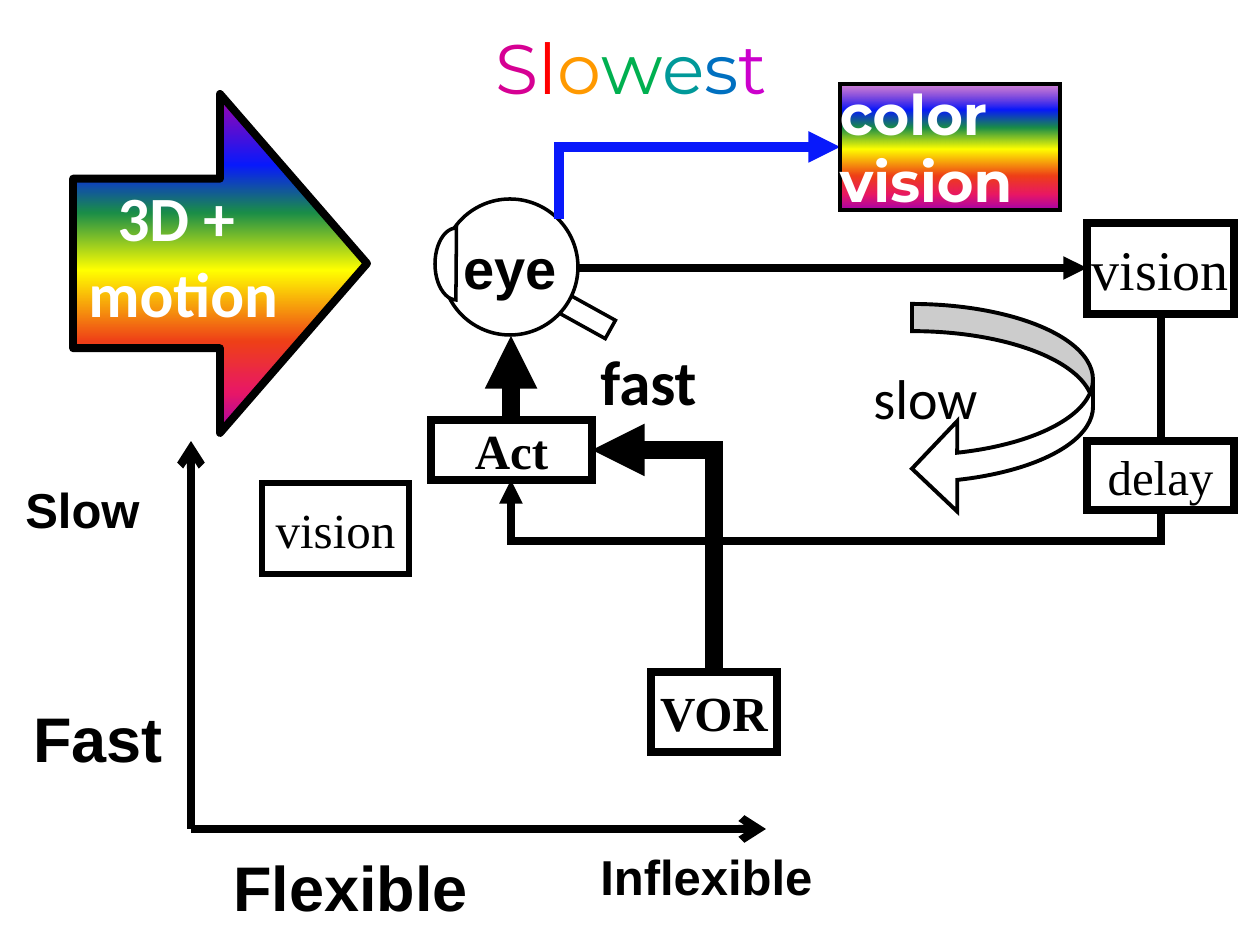
from dataclasses import dataclass
from typing import Optional

from lxml.etree import SubElement
from pptx import Presentation
from pptx.dml.color import RGBColor
from pptx.enum.shapes import MSO_CONNECTOR as Connector, MSO_SHAPE as Preset
from pptx.enum.text import MSO_ANCHOR as Anchor, MSO_AUTO_SIZE as AutoSize, PP_ALIGN as Align
from pptx.oxml.ns import qn
from pptx.util import Pt

EMU_PER_PX = 914400 / 126
BLACK, WHITE, BLUE = "000000", "FFFFFF", "0819FB"
SERIF, SANS, HUMANIST, GEOMETRIC = "Times New Roman", "Arial", "Calibri", "Montserrat"
RAINBOW = [(0, "A603AB"), (21, BLUE), (35, "1A8D48"), (52, "FFFF00"),
           (73, "EE3F17"), (88, "E81766"), (100, "A603AB")]


@dataclass
class Font:
    name: str
    size: int
    bold: bool = False
    color: str = BLACK


@dataclass
class Label:
    text: str
    left: int
    top: int
    width: int
    height: int
    font: Font


@dataclass
class Figure:
    preset: Preset
    left: int
    top: int
    width: int
    height: int
    line_width: float
    text: str = ""
    font: Optional[Font] = None
    rotation: int = 0
    adjustments: tuple = ()


@dataclass
class Arrow:
    start: tuple
    end: tuple
    width: float
    color: str = BLACK
    head: str = "triangle"


@dataclass
class Elbow(Arrow):
    """An arrow with right-angled bends, held in a frame turned by rotation."""
    preset: str = "bentConnector2"
    rotation: int = 90
    flip: str = ""
    bend: Optional[int] = None


def px(value: float) -> int:
    return round(value * EMU_PER_PX)


def rgb(color: str) -> RGBColor:
    return RGBColor.from_string(color)


def set_font(target, font: Font) -> None:
    target.name, target.size, target.bold = font.name, Pt(font.size), font.bold
    target.color.rgb = rgb(font.color)


def set_line(item, width: float, color: str = BLACK, mitered: bool = True):
    item.line.color.rgb = rgb(color)
    item.line.width = Pt(width)
    outline = item.line._get_or_add_ln()
    if mitered:
        SubElement(outline, qn("a:miter"), lim="800000")
    return outline


def write(frame, text: str, font: Font, align: Align) -> None:
    frame.word_wrap = False
    frame.text = text
    for paragraph in frame.paragraphs:
        paragraph.alignment = align
        set_font(paragraph.font, font)


def add_label(slide, label: Label):
    box = slide.shapes.add_textbox(*map(px, (label.left, label.top, label.width, label.height)))
    write(box.text_frame, label.text, label.font, Align.LEFT)
    box.text_frame.auto_size = AutoSize.SHAPE_TO_FIT_TEXT
    return box


def add_figure(slide, figure: Figure, mitered: bool = True):
    shape = slide.shapes.add_shape(
        figure.preset, *map(px, (figure.left, figure.top, figure.width, figure.height)))
    shape.shadow.inherit = False
    shape.rotation = figure.rotation
    for index, value in enumerate(figure.adjustments):
        shape.adjustments[index] = value
    shape.fill.solid()
    shape.fill.fore_color.rgb = rgb(WHITE)
    set_line(shape, figure.line_width, mitered=mitered)
    if figure.font:
        write(shape.text_frame, figure.text, figure.font, Align.CENTER)
        shape.text_frame.vertical_anchor = Anchor.MIDDLE
    return shape


def fill_rainbow(shape, first_alpha: int = 100) -> None:
    """Fill from top to bottom and let the text reach the edges."""
    shape.fill.gradient()
    shape.fill.gradient_angle = 270
    stops = shape._element.spPr.find(".//" + qn("a:gsLst"))
    stops.clear()
    for position, color in RAINBOW:
        stop = SubElement(stops, qn("a:gs"), pos=str(position * 1000))
        value = SubElement(stop, qn("a:srgbClr"), val=color)
        if position == 0 and first_alpha < 100:
            SubElement(value, qn("a:alpha"), val=str(first_alpha * 1000))
    frame = shape.text_frame
    frame.margin_left = frame.margin_right = frame.margin_top = frame.margin_bottom = 0


def finish_arrow(connector, arrow: Arrow) -> None:
    outline = set_line(connector, arrow.width, arrow.color)
    SubElement(outline, qn("a:tailEnd"), type=arrow.head)
    SubElement(connector._element.spPr, qn("a:effectLst"))


def add_arrow(slide, arrow: Arrow) -> None:
    connector = slide.shapes.add_connector(
        Connector.STRAIGHT, *map(px, arrow.start + arrow.end))
    finish_arrow(connector, arrow)


def add_elbow(slide, elbow: Elbow) -> None:
    (x1, y1), (x2, y2) = elbow.start, elbow.end
    center_x, center_y = (x1 + x2) / 2, (y1 + y2) / 2
    half_width, half_height = abs(y2 - y1) / 2, abs(x2 - x1) / 2
    if "h" in elbow.flip:
        half_width = -half_width
    if "v" in elbow.flip:
        half_height = -half_height
    connector = slide.shapes.add_connector(
        Connector.ELBOW, px(center_x - half_width), px(center_y - half_height),
        px(center_x + half_width), px(center_y + half_height))
    properties = connector._element.spPr
    properties.find(qn("a:xfrm")).set("rot", str(elbow.rotation * 60000))
    geometry = properties.find(qn("a:prstGeom"))
    geometry.set("prst", elbow.preset)
    if elbow.bend is not None:
        SubElement(geometry.find(qn("a:avLst")), qn("a:gd"),
                   name="adj1", fmla=f"val {elbow.bend}")
    finish_arrow(connector, elbow)


EYE = [
    Figure(Preset.RECTANGLE, 556, 305, 58, 21, 2, rotation=29),
    Figure(Preset.OVAL, 442, 199, 136, 136, 2, "eye", Font(SANS, 32, True)),
    Figure(Preset.CHORD, 435, 228, 43, 72, 2, adjustments=(54.59, 162)),
]
ARROWS = [
    Arrow((191, 829), (191, 441), 4.5, head="arrow"),
    Arrow((191, 829), (766, 829), 4.5, head="arrow"),
    Arrow((578, 268), (1087, 268), 4.5),
    Arrow((511, 420), (511, 336), 10),
    Arrow((1161, 314), (1161, 494), 4.5),
]
ELBOWS = [
    Elbow((1161, 510), (511, 480), 4.5, preset="bentConnector3", flip="h", bend=-102900),
    Elbow((714, 672), (592, 450), 10, rotation=270, flip="v"),
    Elbow((559, 219), (840, 147), 6, BLUE, flip="hv"),
]
BOXES = [
    Figure(Preset.RECTANGLE, 262, 483, 147, 91, 3, "vision", Font(SERIF, 28)),
    Figure(Preset.RECTANGLE, 1087, 223, 147, 91, 4.5, "vision", Font(SERIF, 32)),
    Figure(Preset.RECTANGLE, 431, 420, 161, 60, 4.5, "Act", Font(SERIF, 28, True)),
    Figure(Preset.RECTANGLE, 1087, 441, 147, 69, 4.5, "delay", Font(SERIF, 28)),
    Figure(Preset.RECTANGLE, 651, 672, 126, 80, 4.5, "VOR", Font(SERIF, 28, True)),
]
LOOP = Figure(Preset.CURVED_RIGHT_ARROW, 912, 304, 181, 210, 2.25,
              adjustments=(0.15, 0.5, 0.25))
MOTION = Figure(Preset.RIGHT_ARROW, 73, 94, 294, 339, 4.5, "3D + \nmotion",
                Font(HUMANIST, 36, True, WHITE))
COLOR_VISION = Figure(Preset.RECTANGLE, 840, 84, 220, 126, 2.25, "color\nvision",
                      Font(GEOMETRIC, 32, True, WHITE))
LABELS = [
    Label("Slow", 13, 473, 141, 72, Font(SANS, 28, True)),
    Label("Fast", 21, 693, 156, 89, Font(SANS, 36, True)),
    Label("Flexible", 221, 842, 262, 89, Font(SANS, 36, True)),
    Label("Inflexible", 588, 840, 241, 72, Font(SANS, 28, True)),
    Label("slow", 861, 357, 131, 81, Font(HUMANIST, 32)),
    Label("fast", 588, 336, 122, 89, Font(HUMANIST, 36, True)),
]
SLOWEST = Label("", 483, 18, 334, 97, Font(GEOMETRIC, 40))
SLOWEST_COLORS = ["D60093", "FF0000", "FF9900", "00B050", "009999", "0070C0", "CC00CC"]


def main() -> None:
    presentation = Presentation()
    presentation.slide_width, presentation.slide_height = px(1260), px(945)
    slide = presentation.slides.add_slide(presentation.slide_layouts[6])

    for figure in EYE:
        add_figure(slide, figure)
    for arrow in ARROWS:
        add_arrow(slide, arrow)
    for elbow in ELBOWS:
        add_elbow(slide, elbow)
    for figure in BOXES:
        add_figure(slide, figure)

    loop = add_figure(slide, LOOP)
    loop._element.spPr.find(qn("a:xfrm")).set("flipH", "1")
    motion = add_figure(slide, MOTION, mitered=False)
    motion.text_frame.vertical_anchor = Anchor.TOP
    fill_rainbow(motion)
    color_vision = add_figure(slide, COLOR_VISION)
    fill_rainbow(color_vision, first_alpha=46)
    for paragraph in color_vision.text_frame.paragraphs:
        paragraph.alignment = Align.LEFT

    for label in LABELS:
        add_label(slide, label)
    paragraph = add_label(slide, SLOWEST).text_frame.paragraphs[0]
    for letter, color in zip("Slowest", SLOWEST_COLORS):
        run = paragraph.add_run()
        run.text = letter
        run.font.color.rgb = rgb(color)

    presentation.save("out.pptx")


if __name__ == "__main__":
    main()
